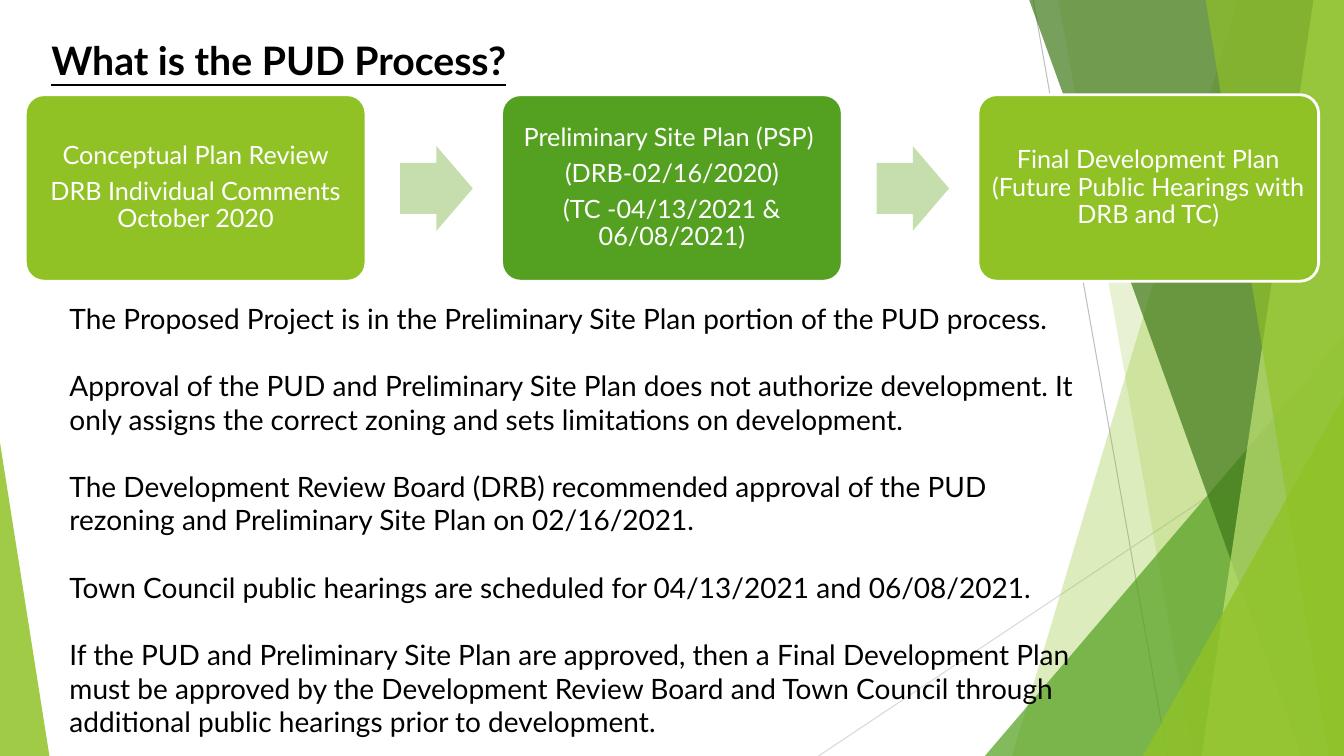
from dataclasses import dataclass

from lxml.etree import SubElement
from pptx import Presentation
from pptx.dml.color import RGBColor
from pptx.enum.shapes import MSO_CONNECTOR, MSO_SHAPE
from pptx.enum.text import MSO_ANCHOR, PP_ALIGN
from pptx.oxml.ns import qn
from pptx.util import Inches, Pt

COLORS = {
    "lime": "90C226", "green": "54A021", "forest": "3F7819", "pale": "C0E474",
    "arrow": "C6DDAD", "gray": "BFBFBF", "silver": "D9D9D9",
    "white": "FFFFFF", "black": "000000",
}
FONT = "Lato"

# All places are percentages of the slide's width (x) and height (y).
STEP_LEFT, STEP_TOP, STEP_WIDTH, STEP_HEIGHT = 1.88, 12.53, 25.35, 24.67
ARROW_LEFT, ARROW_TOP, ARROW_WIDTH, ARROW_HEIGHT = 29.78, 19.33, 5.4, 11.2
STEP_PITCH = 35.44
TEXT_WIDTH = 76.58


@dataclass
class Ray:
    x1: float
    y1: float
    x2: float
    y2: float
    color: str


@dataclass
class Band:
    """Full-height facet on the right edge, with a slanting left side."""
    top_x: float
    bottom_x: float
    color: str
    alpha: int


@dataclass
class Corner:
    """Triangle standing on the slide's bottom edge."""
    left: float
    top: float
    width: float
    apex: float
    color: str
    alpha: int


@dataclass
class Step:
    lines: list[str]
    color: str


RAYS = [
    Ray(76.88, 0, 86.85, 100, "gray"),
    Ray(100, 53.7, 60.9, 100, "silver"),
]
FACETS = [
    Band(92.1, 75.3, "lime", 30),
    Band(78.75, 88.73, "lime", 20),
    Corner(73.28, 44.4, 26.72, 1, "green", 72),
    Band(76.58, 96.83, "forest", 70),
    Band(97.73, 89.4, "pale", 70),
    Band(89.7, 98.85, "lime", 65),
    Corner(85.05, 52.4, 14.95, 1, "lime", 80),
    Corner(0, 58.53, 3.68, 0, "lime", 85),
]
STEPS = [
    Step(["Conceptual Plan Review", "DRB Individual Comments October 2020"], "lime"),
    Step(["Preliminary Site Plan (PSP) ", "(DRB-02/16/2020)",
          "(TC -04/13/2021 & 06/08/2021)"], "green"),
    Step(["Final Development Plan (Future Public Hearings with DRB and TC)"], "lime"),
]
BODY = [
    "The Proposed Project is in the Preliminary Site Plan portion of the PUD process.",
    "Approval of the PUD and Preliminary Site Plan does not authorize development. "
    "It only assigns the correct zoning and sets limitations on development.",
    "The Development Review Board (DRB) recommended approval of the PUD rezoning "
    "and Preliminary Site Plan on 02/16/2021.",
    "Town Council public hearings are scheduled for 04/13/2021 and 06/08/2021.",
    "If the PUD and Preliminary Site Plan are approved, then a Final Development Plan "
    "must be approved by the Development Review Board and Town Council through "
    "additional public hearings prior to development.",
]

prs = Presentation()
prs.slide_width, prs.slide_height = Inches(13.33), Inches(7.5)
s = prs.slides.add_slide(prs.slide_layouts[6])


def x(share: float) -> int:
    return round(prs.slide_width * share / 100)


def y(share: float) -> int:
    return round(prs.slide_height * share / 100)


def rgb(name: str) -> RGBColor:
    return RGBColor.from_string(COLORS[name])


def paint(sp, color: str, alpha: int = 100) -> None:
    """Plain fill without line or shadow; alpha is opacity in percent."""
    sp.shadow.inherit = False
    sp.fill.solid()
    sp.fill.fore_color.rgb = rgb(color)
    sp.line.fill.background()
    if alpha < 100:
        clr = sp.fill._xPr.find(".//" + qn("a:srgbClr"))
        SubElement(clr, qn("a:alpha")).set("val", str(alpha * 1000))


def add_preset(kind, left: float, top: float, width: float, height: float,
               adjustments: list[float]):
    sp = s.shapes.add_shape(kind, x(left), y(top), x(width), y(height))
    for i, value in enumerate(adjustments):
        sp.adjustments[i] = value
    return sp


def write(tf, lines: list[str], size: int, color: str) -> None:
    tf.word_wrap = True
    for i, line in enumerate(lines):
        p = tf.paragraphs[0] if i == 0 else tf.add_paragraph()
        p.text = line
        p.font.name, p.font.size = FONT, Pt(size)
        p.font.color.rgb = rgb(color)


def add_text(left: float, top: float, height: float, lines: list[str], size: int):
    tf = s.shapes.add_textbox(x(left), y(top), x(TEXT_WIDTH), y(height)).text_frame
    write(tf, lines, size, "black")
    return tf


def draw_ray(ray: Ray) -> None:
    line = s.shapes.add_connector(
        MSO_CONNECTOR.STRAIGHT, x(ray.x1), y(ray.y1), x(ray.x2), y(ray.y2))
    line.line.color.rgb = rgb(ray.color)
    line.line.width = Pt(0.75)
    SubElement(line._element.spPr, qn("a:effectLst"))


def draw_facet(facet: Band | Corner) -> None:
    if isinstance(facet, Band):
        fb = s.shapes.build_freeform(x(facet.top_x), 0)
        fb.add_line_segments([(x(100), 0), (x(100), y(100)), (x(facet.bottom_x), y(100))])
        sp = fb.convert_to_shape()
    else:
        sp = add_preset(MSO_SHAPE.ISOSCELES_TRIANGLE, facet.left, facet.top,
                        facet.width, 100 - facet.top, [facet.apex])
    paint(sp, facet.color, facet.alpha)


def draw_step(index: int, step: Step) -> None:
    sp = add_preset(MSO_SHAPE.ROUNDED_RECTANGLE, STEP_LEFT + index * STEP_PITCH,
                    STEP_TOP, STEP_WIDTH, STEP_HEIGHT, [0.1])
    paint(sp, step.color)
    sp.line.color.rgb = rgb("white")
    sp.line.width = Pt(2)
    tf = sp.text_frame
    tf.margin_left = tf.margin_right = tf.margin_top = tf.margin_bottom = Inches(0.07)
    tf.vertical_anchor = MSO_ANCHOR.MIDDLE
    write(tf, step.lines, 18, "white")
    for p in tf.paragraphs:
        p.alignment = PP_ALIGN.CENTER
        p.line_spacing = 0.9
        p.space_after = Pt(6.3)


def draw_arrow(index: int) -> None:
    sp = add_preset(MSO_SHAPE.RIGHT_ARROW, ARROW_LEFT + index * STEP_PITCH,
                    ARROW_TOP, ARROW_WIDTH, ARROW_HEIGHT, [0.6, 0.5])
    paint(sp, "arrow")


for ray in RAYS:
    draw_ray(ray)
for facet in FACETS:
    draw_facet(facet)

title = add_text(3.08, 4.13, 22.93, ["What is the PUD Process?"], 28)
title.paragraphs[0].font.bold = title.paragraphs[0].font.underline = True

for index, step in enumerate(STEPS):
    draw_step(index, step)
    if index < len(STEPS) - 1:
        draw_arrow(index)

body = add_text(4.43, 39.2, 60, BODY, 20)
for p in body.paragraphs[1:]:
    p.space_before = Pt(24)

prs.save("out.pptx")
